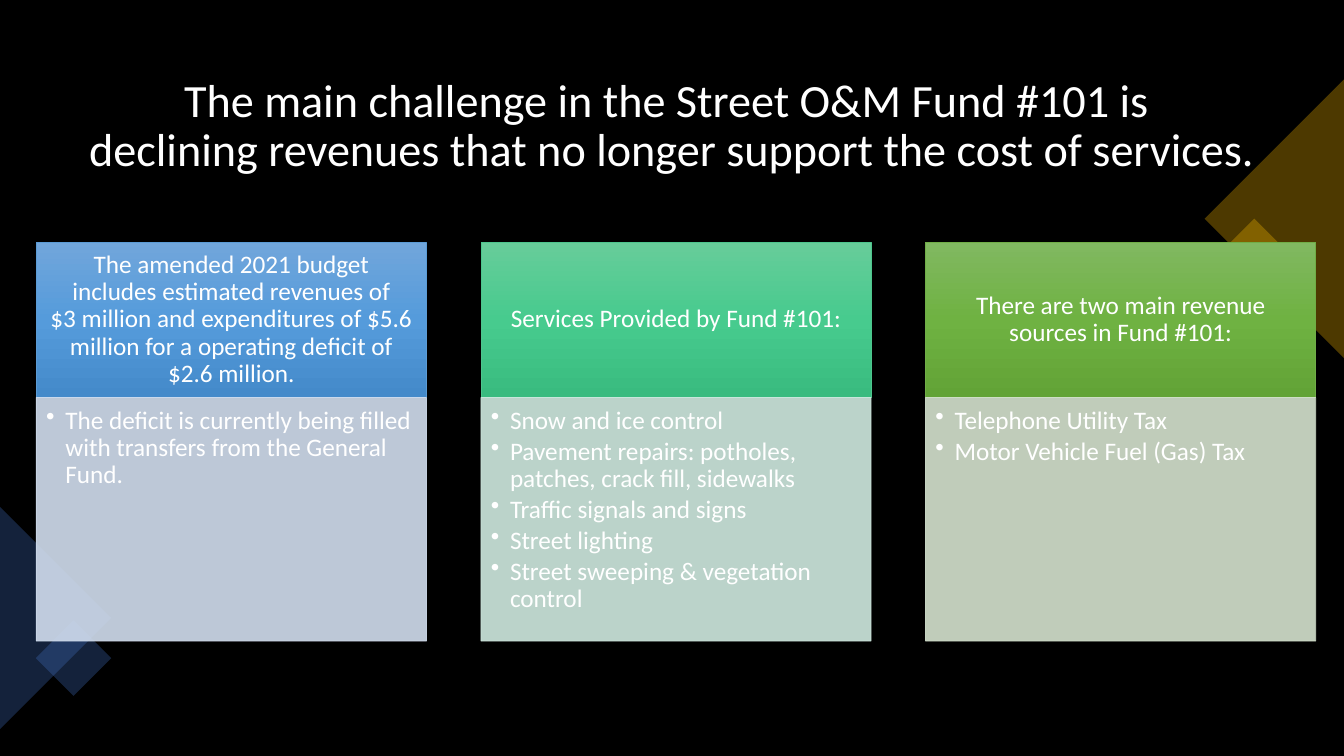
import copy

import pptx
import pptx.dml.color
import pptx.enum.shapes
import pptx.enum.text
import pptx.oxml.ns
import pptx.oxml.xmlchemy
import pptx.util
from lxml import etree

Inches = pptx.util.Inches
Pt = pptx.util.Pt
qn = pptx.oxml.ns.qn
SHAPES = pptx.enum.shapes.MSO_SHAPE
ANCHOR = pptx.enum.text.MSO_ANCHOR
ALIGN = pptx.enum.text.PP_ALIGN

SLIDE_WIDTH, SLIDE_HEIGHT = 13.33, 7.5
FONT = "Calibri"
COLORS = {
    "background": "000000",
    "text": "FFFFFF",
    "gold": "FFC000",
    "navy": "4472C4",
}
TITLE = ("The main challenge in the Street O&M Fund #101 is \v"
         "declining revenues that no longer support the cost of services.")
COLUMNS = [
    {
        "heading": "The amended 2021 budget includes estimated revenues of\v"
                   "$3 million and expenditures of $5.6 million for a "
                   "operating deficit of $2.6 million.",
        "items": ["The deficit is currently being filled with transfers "
                  "from the General Fund."],
        "gradient": ["71A6DB", "559BDB", "448ACA"],
        "line": "5B9BD5",
        "panel": "D2DEEF",
    },
    {
        "heading": "Services Provided by Fund #101:",
        "items": ["Snow and ice control",
                  "Pavement repairs: potholes, patches, crack fill, sidewalks",
                  "Traffic signals and signs",
                  "Street lighting",
                  "Street sweeping & vegetation control"],
        "gradient": ["67CC9A", "47CB8E", "39BB7F"],
        "line": "4DC58D",
        "panel": "D0EAE1",
    },
    {
        "heading": "There are two main revenue sources in Fund #101:",
        "items": ["Telephone Utility Tax", "Motor Vehicle Fuel (Gas) Tax"],
        "gradient": ["81B861", "6FB242", "62A336"],
        "line": "70AD47",
        "panel": "D5E3CF",
    },
]


def rgb(value):
    """Return the colour object for a hex string."""
    return pptx.dml.color.RGBColor.from_string(value)


def add_block(slide, kind, box, fill=None, line=None, opacity=100):
    """Add a shadowless shape with an optional fill, outline and opacity."""
    shape = slide.shapes.add_shape(kind, *map(Inches, box))
    shape.shadow.inherit = False
    if fill:
        shape.fill.solid()
        shape.fill.fore_color.rgb = rgb(fill)
    if line:
        shape.line.color.rgb = rgb(line)
        shape.line.width = Pt(0.5)
    else:
        shape.line.fill.background()
    if opacity < 100:
        for color in shape._element.spPr.iter(qn("a:srgbClr")):
            etree.SubElement(color, qn("a:alpha"), val=str(opacity * 1000))
    return shape


def fill_gradient(shape, colors):
    """Fill a shape from top to bottom with evenly spaced colours."""
    shape.fill.gradient()
    shape.fill.gradient_angle = 270
    stop_list = shape._element.spPr.find(".//" + qn("a:gsLst"))
    stop_list.insert(1, copy.deepcopy(stop_list[0]))
    for index, (stop, color) in enumerate(zip(shape.fill.gradient_stops, colors)):
        stop.position = index / (len(colors) - 1)
        stop.color.rgb = rgb(color)


def format_frame(frame, margins, anchor):
    """Set wrapping, margins and vertical anchor of a text frame."""
    frame.word_wrap = True
    frame.auto_size = pptx.enum.text.MSO_AUTO_SIZE.NONE
    frame.vertical_anchor = anchor
    (frame.margin_left, frame.margin_top,
     frame.margin_right, frame.margin_bottom) = map(Inches, margins)


def format_paragraph(paragraph, size, alignment):
    """Give a paragraph the slide's font, colour and line spacing."""
    paragraph.alignment = alignment
    paragraph.line_spacing = 0.9
    paragraph.font.name = FONT
    paragraph.font.size = Pt(size)
    paragraph.font.color.rgb = rgb(COLORS["text"])


def add_bullet(paragraph):
    """Give a paragraph a round bullet with a hanging indent."""
    properties = paragraph._p.get_or_add_pPr()
    properties.set("marL", str(Inches(0.19)))
    properties.set("indent", str(Inches(-0.19)))
    etree.SubElement(properties, qn("a:buChar"), char="•")


def place_title(slide, box):
    """Place and format the title placeholder in its box."""
    title = slide.shapes.title
    title.left, title.top, title.width, title.height = map(Inches, box)
    title.text_frame.text = TITLE
    format_frame(title.text_frame, (0.1, 0.05, 0.1, 0.05), ANCHOR.MIDDLE)
    format_paragraph(title.text_frame.paragraphs[0], 33, ALIGN.CENTER)


def add_corner(slide, color, triangle, diamond_center, diamond_side, rotation):
    """Add a translucent edge triangle given by centre and base, and a diamond."""
    center_x, center_y, base = triangle
    edge = add_block(slide, SHAPES.ISOSCELES_TRIANGLE,
                     (center_x - base / 2, center_y - base / 4, base, base / 2),
                     color, opacity=30)
    edge.rotation = rotation
    x, y = diamond_center
    diamond = add_block(slide, SHAPES.RECTANGLE,
                        (x - diamond_side / 2, y - diamond_side / 2,
                         diamond_side, diamond_side), color, opacity=30)
    diamond.rotation = 45


def add_column(slide, column, box):
    """Add a gradient heading above a translucent bullet panel."""
    left, top, width, height = box
    heading_height = height * 0.39
    heading = add_block(slide, SHAPES.RECTANGLE,
                        (left, top, width, heading_height), line=column["line"])
    fill_gradient(heading, column["gradient"])
    heading.text_frame.text = column["heading"]
    format_frame(heading.text_frame, (0.14, 0.08, 0.14, 0.08), ANCHOR.MIDDLE)
    format_paragraph(heading.text_frame.paragraphs[0], 18, ALIGN.CENTER)

    panel = add_block(slide, SHAPES.RECTANGLE,
                      (left, top + heading_height, width, height - heading_height),
                      column["panel"], column["panel"], 90)
    panel.text_frame.text = "\n".join(column["items"])
    format_frame(panel.text_frame, (0.1, 0.1, 0.14, 0.16), ANCHOR.TOP)
    for paragraph in panel.text_frame.paragraphs:
        format_paragraph(paragraph, 18, ALIGN.LEFT)
        paragraph.space_after = Pt(2.7)
        add_bullet(paragraph)


def main():
    """Build the slide and save it."""
    presentation = pptx.Presentation()
    presentation.slide_width = Inches(SLIDE_WIDTH)
    presentation.slide_height = Inches(SLIDE_HEIGHT)
    slide = presentation.slides.add_slide(presentation.slide_layouts[5])
    slide.background.fill.solid()
    slide.background.fill.fore_color.rgb = rgb(COLORS["background"])

    place_title(slide, (0.7, 0.64, 11.93, 1.24))
    add_corner(slide, COLORS["gold"], (12.64, 2.17, 2.77), (12.44, 2.67), 0.71, 270)
    add_corner(slide, COLORS["navy"], (0.55, 6.13, 2.21), (0.73, 6.53), 0.53, 90)
    for index, column in enumerate(COLUMNS):
        add_column(slide, column, (0.36 + 4.41 * index, 2.4, 3.87, 3.96))
    presentation.save("out.pptx")


if __name__ == "__main__":
    main()
